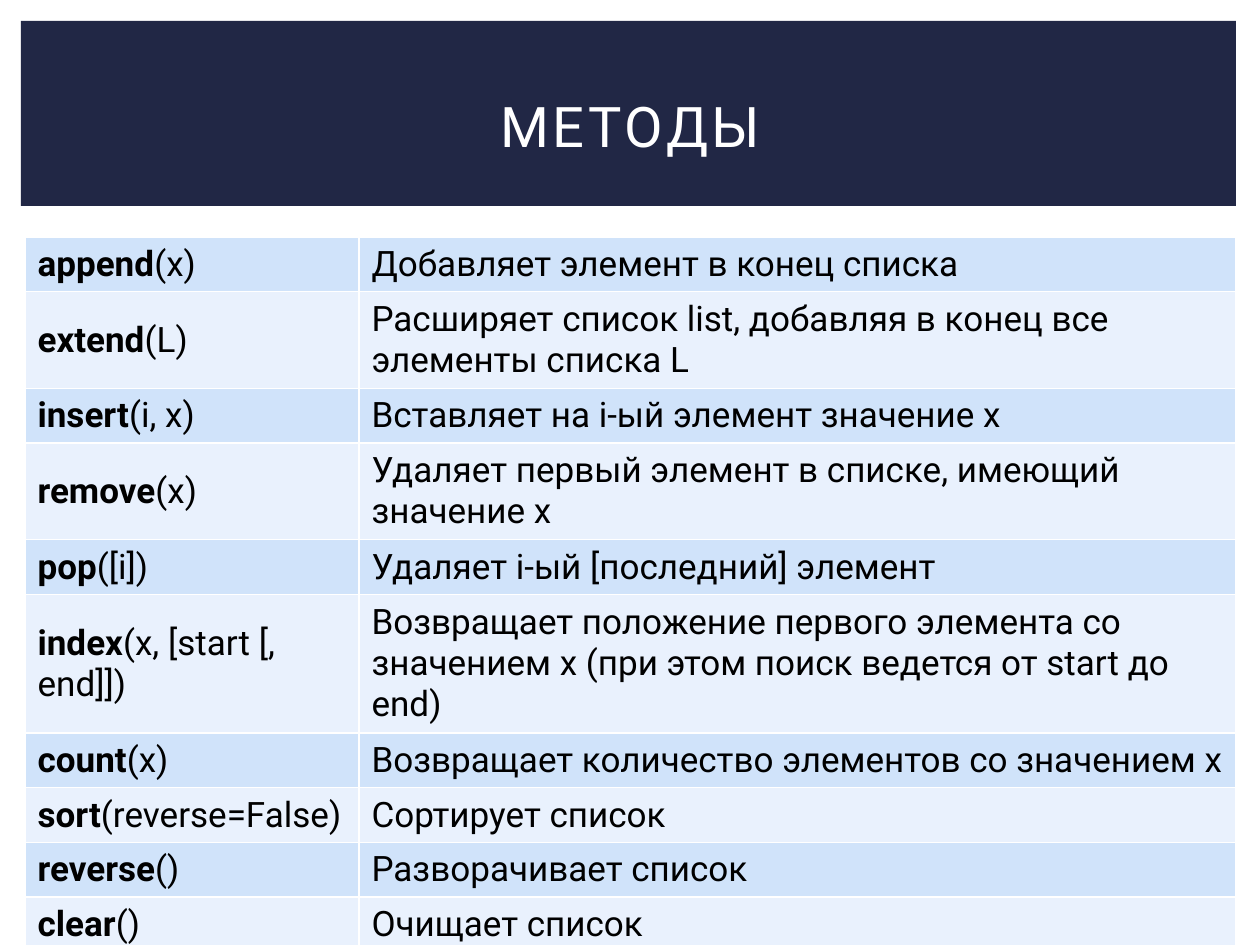
import pptx
import pptx.dml.color
import pptx.enum.shapes
import pptx.enum.text
import pptx.oxml
import pptx.oxml.ns
import pptx.util

SCALE = 914400 // 126  # EMU in one px
FONT = "Roboto"
NAVY, WHITE, BLACK = "212745", "FFFFFF", "000000"
BANDS = ("D0E3FA", "E9F1FD")
COLUMNS = (334, 877)
ROW_HEIGHT = 52
MIDDLE = pptx.enum.text.MSO_ANCHOR.MIDDLE

# Method name, its arguments, what it does
METHODS = [
    ("append", "(x)", "Добавляет элемент в конец списка"),
    ("extend", "(L)", "Расширяет список list, добавляя в конец все элементы списка L"),
    ("insert", "(i, x)", "Вставляет на i-ый элемент значение x"),
    ("remove", "(x)", "Удаляет первый элемент в списке, имеющий значение x"),
    ("pop", "([i])", "Удаляет i-ый [последний] элемент"),
    ("index", "(x, [start [, end]])",
     "Возвращает положение первого элемента со значением x "
     "(при этом поиск ведется от start до end)"),
    ("count", "(x)", "Возвращает количество элементов со значением x"),
    ("sort", "(reverse=False)", "Сортирует список"),
    ("reverse", "()", "Разворачивает список"),
    ("clear", "()", "Очищает список"),
]


def px(*lengths):
    return [pptx.util.Emu(length * SCALE) for length in lengths]


def color(value):
    return pptx.dml.color.RGBColor.from_string(value)


def paint(thing, value):
    thing.fill.solid()
    thing.fill.fore_color.rgb = color(value)


def set_values(target, values):
    for name, value in values.items():
        setattr(target, name, value)


def add_span(para, text, size, hue, bold=False):
    span = para.add_run()
    span.text = text
    set_values(span.font, {"name": FONT, "size": pptx.util.Pt(size), "bold": bold})
    span.font.color.rgb = color(hue)
    return span


def add_banner(page):
    banner = page.shapes.add_shape(
        pptx.enum.shapes.MSO_SHAPE.RECTANGLE, *px(21, 21, 1215, 185))
    banner.shadow.inherit = False
    paint(banner, NAVY)
    banner.line.fill.background()


def add_title(page, text):
    box = page.shapes.add_textbox(*px(53, 49, 1155, 145))
    top, bottom = px(14, 6)
    set_values(box.text_frame, {"word_wrap": True, "vertical_anchor": MIDDLE,
                                "margin_top": top, "margin_bottom": bottom})
    para = box.text_frame.paragraphs[0]
    para.alignment = pptx.enum.text.PP_ALIGN.CENTER
    span = add_span(para, text, 32, WHITE)
    span.font._element.set("spc", "200")  # letter spacing of 2 pt


def add_borders(cell):
    properties = cell._tc.get_or_add_tcPr()
    for index, side in enumerate(("lnL", "lnR", "lnT", "lnB")):
        properties.insert(index, pptx.oxml.parse_xml(
            f'<a:{side} {pptx.oxml.ns.nsdecls("a")} w="12700"><a:solidFill>'
            f'<a:srgbClr val="{WHITE}"/></a:solidFill></a:{side}>'))


def fill_cell(cell, band, spans):
    paint(cell, band)
    add_borders(cell)
    cell.vertical_anchor = MIDDLE
    for text, bold in spans:
        add_span(cell.text_frame.paragraphs[0], text, 20, BLACK, bold)


def add_methods(page):
    size = px(sum(COLUMNS), ROW_HEIGHT * len(METHODS))
    table = page.shapes.add_table(
        len(METHODS), len(COLUMNS), *px(25, 237), *size).table
    set_values(table, {"first_row": False, "horz_banding": False})
    for column, width in zip(table.columns, px(*COLUMNS)):
        column.width = width
    for index, (name, arguments, meaning) in enumerate(METHODS):
        band = BANDS[index % 2]
        fill_cell(table.cell(index, 0), band, [(name, True), (arguments, False)])
        fill_cell(table.cell(index, 1), band, [(meaning, False)])


def main():
    deck = pptx.Presentation()
    width, height = px(1260, 945)
    set_values(deck, {"slide_width": width, "slide_height": height})
    page = deck.slides.add_slide(deck.slide_layouts[6])
    add_banner(page)
    add_title(page, "МЕТОДЫ")
    add_methods(page)
    deck.save("out.pptx")


if __name__ == "__main__":
    main()
